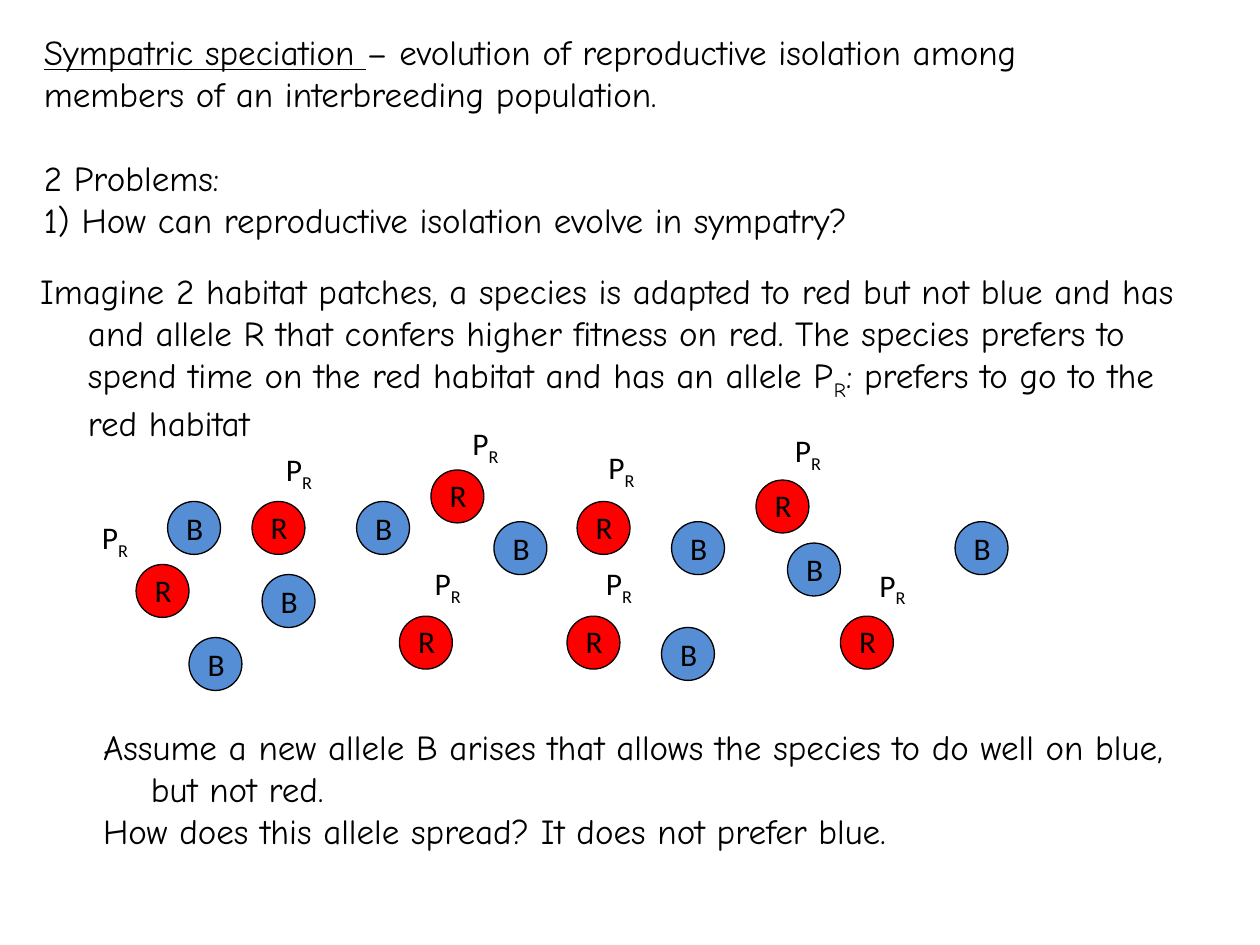
from dataclasses import dataclass

from pptx import Presentation
from pptx.dml.color import RGBColor
from pptx.enum.shapes import MSO_SHAPE
from pptx.enum.text import MSO_AUTO_SIZE
from pptx.util import Inches, Pt


@dataclass(frozen=True)
class Theme:
    ink: RGBColor = RGBColor(0x00, 0x00, 0x00)
    red: RGBColor = RGBColor(0xFF, 0x00, 0x00)
    blue: RGBColor = RGBColor(0x55, 0x8E, 0xD5)
    body_font: str = "Comic Neue"
    label_font: str = "Calibri"
    body_size: int = 20
    label_size: int = 18
    outline: float = 0.75
    hanging: float = 0.38
    patch_size: float = 0.42


class SlideBuilder:
    def __init__(self, page, theme):
        self.page = page
        self.theme = theme

    def text(self, left, top, width, height, paragraphs, label=False, hanging=False):
        theme = self.theme
        box = self.page.shapes.add_textbox(
            Inches(left), Inches(top), Inches(width), Inches(height))
        frame = box.text_frame
        frame.word_wrap = not label
        frame.auto_size = MSO_AUTO_SIZE.SHAPE_TO_FIT_TEXT
        for index, spans in enumerate(paragraphs):
            para = frame.add_paragraph() if index else frame.paragraphs[0]
            para.font.name = theme.label_font if label else theme.body_font
            para.font.size = Pt(theme.label_size if label else theme.body_size)
            para.font.color.rgb = theme.ink
            if hanging:
                properties = para._p.get_or_add_pPr()
                properties.set("marL", str(Inches(theme.hanging)))
                properties.set("indent", str(-Inches(theme.hanging)))
            for words, style in spans:
                span = para.add_run()
                span.text = words
                if style == "underline":
                    span.font.underline = True
                elif style == "subscript":
                    span._r.get_or_add_rPr().set("baseline", "-25000")

    def patch(self, left, top, fill):
        size = Inches(self.theme.patch_size)
        circle = self.page.shapes.add_shape(
            MSO_SHAPE.OVAL, Inches(left), Inches(top), size, size)
        circle.shadow.inherit = False
        circle.fill.solid()
        circle.fill.fore_color.rgb = fill
        circle.line.color.rgb = self.theme.ink
        circle.line.width = Pt(self.theme.outline)

    def allele(self, left, top, letter):
        self.text(left, top, 0.34, 0.4, [[(letter, "")]], label=True)

    def preference(self, left, top):
        self.text(left, top, 0.42, 0.4, [[("P", ""), ("R", "subscript")]], label=True)


BLUE_PATCHES = [
    (1.33, 3.98), (2.08, 4.56), (2.83, 3.98), (1.5, 5.06), (6.25, 4.31),
    (5.33, 4.14), (7.58, 4.14), (5.25, 4.98), (3.92, 4.14),
]
RED_PATCHES = [
    (2, 3.98), (1.08, 4.48), (3.17, 4.89), (3.42, 3.73),
    (4.58, 3.98), (4.5, 4.89), (6, 3.81), (6.67, 4.89),
]
PREFERENCES = [
    (6.21, 3.37), (6.88, 4.44), (4.71, 4.43), (4.73, 3.51),
    (3.65, 3.32), (3.35, 4.43), (2.17, 3.52), (0.71, 4.06),
]


def main():
    deck = Presentation()
    deck.slide_width, deck.slide_height = Inches(10), Inches(7.5)
    theme = Theme()
    builder = SlideBuilder(deck.slides.add_slide(deck.slide_layouts[6]), theme)

    builder.text(0.25, 0.19, 9.01, 0.77, [[
        ("Sympatric speciation ", "underline"),
        ("– evolution of reproductive isolation among members of an "
         "interbreeding population.", ""),
    ]])
    builder.text(0.25, 1.19, 7.16, 0.77, [
        [("2 Problems:", "")],
        [("1) How can reproductive isolation evolve in sympatry?", "")],
    ])
    builder.text(0.22, 2.09, 9.43, 1.48, [[
        ("Imagine 2 habitat patches, a species is adapted to red but not blue and "
         "has and allele R that confers higher fitness on red. The species prefers "
         "to spend time on the red habitat and has an allele P", ""),
        ("R", "subscript"),
        (": prefers to go to the red habitat", ""),
    ]], hanging=True)
    builder.text(0.72, 5.71, 8.93, 1.1, [
        [("Assume a new allele B arises that allows the species to do well on blue, "
          "but not red.", "")],
        [("How does this allele spread? It does not prefer blue.", "")],
    ], hanging=True)

    for left, top in PREFERENCES:
        builder.preference(left, top)
    habitats = [(BLUE_PATCHES, theme.blue, "B", 0.01), (RED_PATCHES, theme.red, "R", 0)]
    for patches, fill, letter, drop in habitats:
        for left, top in patches:
            builder.patch(left, top, fill)
            builder.allele(left + 0.05, top + drop, letter)

    deck.save("out.pptx")


if __name__ == "__main__":
    main()
